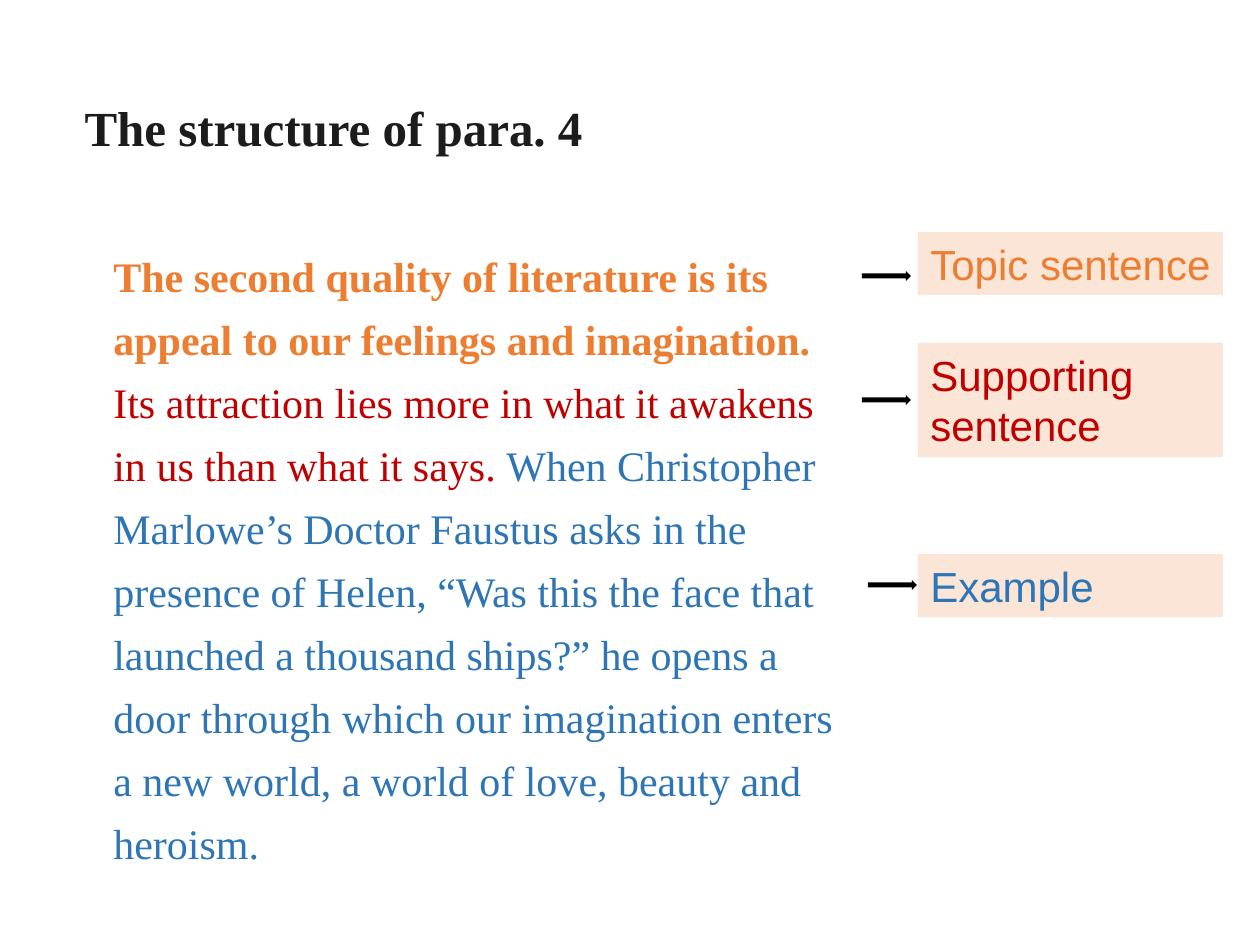
from pptx import Presentation
from pptx.dml.color import RGBColor
from pptx.enum.shapes import MSO_SHAPE
from pptx.enum.text import MSO_ANCHOR, MSO_AUTO_SIZE, PP_ALIGN
from pptx.util import Emu, Pt

RECT, ARROW = MSO_SHAPE.RECTANGLE, MSO_SHAPE.RIGHT_ARROW
TOP, LEFT, FIXED = MSO_ANCHOR.TOP, PP_ALIGN.LEFT, MSO_AUTO_SIZE.NONE

INK = RGBColor(0x1C, 0x1C, 0x1C)
BLACK = RGBColor(0, 0, 0)
ORANGE = RGBColor(0xED, 0x7D, 0x31)
RED = RGBColor(0xC0, 0, 0)
BLUE = RGBColor(0x2E, 0x75, 0xB6)
PEACH = RGBColor(0xFB, 0xE5, 0xD6)
SERIF, SANS = "Times New Roman", "Arial"
EMU_PX = 914400 // 126

TITLE = "The structure of para. 4"
# text, colour, bold
PARTS = [
    ("The second quality of literature is its appeal to our feelings "
     "and imagination. ", ORANGE, True),
    ("Its attraction lies more in what it awakens in us than what it says. ",
     RED, False),
    ("When Christopher Marlowe’s Doctor Faustus asks in the presence of "
     "Helen, “Was this the face that launched a thousand ships?” he opens a "
     "door through which our imagination enters a new world, a world of "
     "love, beauty and heroism.", BLUE, False),
]
# text, colour, top, height, wrap, arrow left, arrow top
LABELS = [
    ("Topic sentence", ORANGE, 232, 63, False, 862, 271),
    ("Supporting sentence", RED, 343, 114, True, 862, 395),
    ("Example", BLUE, 554, 63, True, 868, 580),
]
LABEL_X, LABEL_W = 918, 305
ARROW_W, ARROW_H = 49, 10


def px(*nums):
    return [Emu(n * EMU_PX) for n in nums]


def write(shape, parts, font=SERIF, size=24, spacing=None, wrap=True):
    """Fill the shape with one left-aligned paragraph of coloured runs."""
    frame = shape.text_frame
    frame.word_wrap, frame.auto_size = wrap, FIXED
    frame.vertical_anchor = TOP
    para = frame.paragraphs[0]
    para.alignment = LEFT
    if spacing:
        para.line_spacing = spacing
    for text, color, bold in parts:
        run = para.add_run()
        run.text = text
        run.font.name, run.font.size = font, Pt(size)
        run.font.bold, run.font.color.rgb = bold, color


def draw(slide, kind, box, color):
    shape = slide.shapes.add_shape(kind, *px(*box))
    shape.shadow.inherit = False
    shape.fill.solid()
    shape.fill.fore_color.rgb = color
    shape.line.fill.background()
    return shape


def main():
    deck = Presentation()
    deck.slide_width, deck.slide_height = px(1260, 945)
    slide = deck.slides.add_slide(deck.slide_layouts[5])

    title = slide.shapes.title
    title.left, title.top, title.width, title.height = px(72, 91, 1004, 72)
    write(title, [(TITLE, INK, True)], size=28)

    body = slide.shapes.add_textbox(*px(101, 232, 760, 624))
    write(body, PARTS, spacing=1.25)

    for text, color, top, height, wrap, tail, mid in LABELS:
        label = draw(slide, RECT, (LABEL_X, top, LABEL_W, height), PEACH)
        write(label, [(text, color, False)], font=SANS, wrap=wrap)
        draw(slide, ARROW, (tail, mid, ARROW_W, ARROW_H), BLACK)

    deck.save("out.pptx")


if __name__ == "__main__":
    main()
